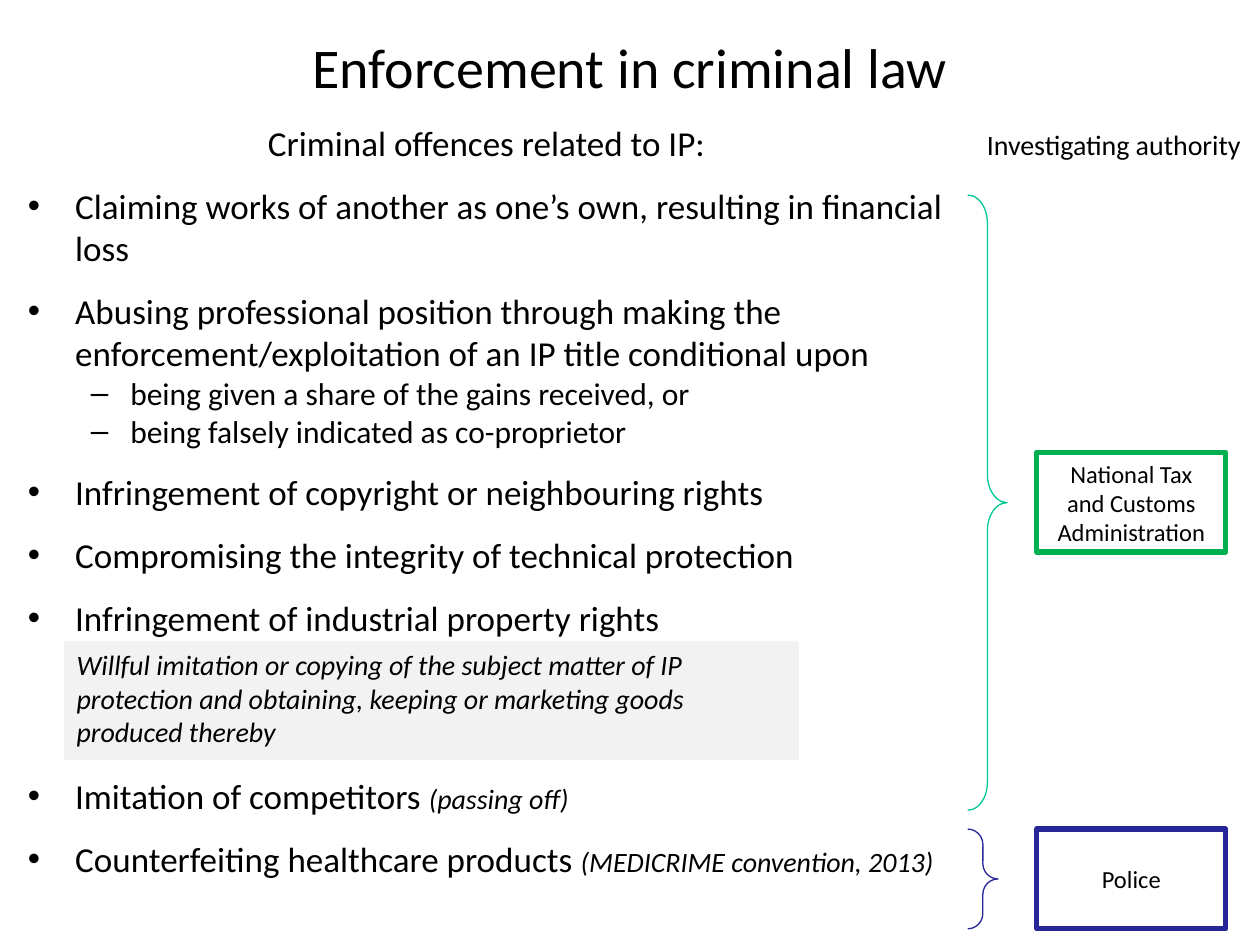
"""Build a slide on criminal offences related to IP and who investigates them."""
from dataclasses import dataclass

from lxml import etree
from pptx import Presentation
from pptx.dml.color import RGBColor
from pptx.enum import shapes, text
from pptx.oxml import ns
from pptx.util import Pt


@dataclass
class Theme:
    font: str = "Calibri"
    ink: str = "000000"
    panel: str = "F2F2F2"
    customs: str = "00B050"
    customs_brace: str = "00C896"
    police: str = "262699"
    title: int = 32
    item: int = 20
    subitem: int = 18
    remark: int = 16
    label: int = 14


theme = Theme()


def add_run(paragraph, wording, size, italic=False):
    run = paragraph.add_run()
    run.text = wording
    run.font.name = theme.font
    run.font.size = Pt(size)
    run.font.italic = italic
    run.font.color.rgb = RGBColor.from_string(theme.ink)


def add_outline(kind, place, line=None, width=0, fill=None):
    outline = slide.shapes.add_shape(kind, *map(Pt, place))
    outline.shadow.inherit = False
    if fill:
        outline.fill.solid()
        outline.fill.fore_color.rgb = RGBColor.from_string(fill)
    else:
        outline.fill.background()
    if line:
        outline.line.color.rgb = RGBColor.from_string(line)
        outline.line.width = Pt(width)
    else:
        outline.line.fill.background()
    return outline


prs = Presentation()
prs.slide_width, prs.slide_height = Pt(720), Pt(540)
slide = prs.slides.add_slide(prs.slide_layouts[1])

title = slide.shapes.title
title.left, title.top, title.width, title.height = map(Pt, (54, 15, 612, 45.5))
title.text_frame.vertical_anchor = text.MSO_ANCHOR.MIDDLE
heading = title.text_frame.paragraphs[0]
heading.alignment = text.PP_ALIGN.CENTER
add_run(heading, "Enforcement in criminal law", theme.title)

offences = slide.placeholders[1]
offences.left, offences.top, offences.width, offences.height = map(Pt, (8.75, 66, 538.5, 465))
offences.text_frame.auto_size = text.MSO_AUTO_SIZE.NONE
offence_list = [
    (0, 12, "Criminal offences related to IP:", ""),
    (0, 12, "Claiming works of another as one’s own, resulting in financial loss", ""),
    (0, 0, "Abusing professional position through making the "
           "enforcement/exploitation of an IP title conditional upon", ""),
    (1, 0, "being given a share of the gains received, or", ""),
    (1, 12, "being falsely indicated as co-proprietor", ""),
    (0, 12, "Infringement of copyright or neighbouring rights", ""),
    (0, 12, "Compromising the integrity of technical protection", ""),
    (0, 78, "Infringement of industrial property rights", ""),
    (0, 12, "Imitation of competitors ", "(passing off)"),
    (0, 12, "Counterfeiting healthcare products ", "(MEDICRIME convention, 2013)"),
]
for index, (level, gap, wording, remark) in enumerate(offence_list):
    frame = offences.text_frame
    offence = frame.add_paragraph() if index else frame.paragraphs[0]
    offence.level = level
    offence.space_before, offence.space_after = Pt(0), Pt(gap)
    add_run(offence, wording, theme.subitem if level else theme.item)
    if remark:
        add_run(offence, remark, theme.remark, italic=True)

lead = offences.text_frame.paragraphs[0]
lead.alignment = text.PP_ALIGN.CENTER
etree.SubElement(lead._p.get_or_add_pPr(), ns.qn("a:buNone"))

definition = add_outline(shapes.MSO_SHAPE.RECTANGLE, (36.75, 366.5, 419.75, 67.75), fill=theme.panel)
definition.text_frame.vertical_anchor = text.MSO_ANCHOR.TOP
definition.text_frame.paragraphs[0].alignment = text.PP_ALIGN.LEFT
add_run(definition.text_frame.paragraphs[0],
        "Willful imitation or copying of the subject matter of IP protection and "
        "obtaining, keeping or marketing goods produced thereby", theme.remark, italic=True)

authorities = [
    ("National Tax and Customs Administration", 258.5, theme.customs, text.MSO_ANCHOR.TOP),
    ("Police", 473.75, theme.police, text.MSO_ANCHOR.MIDDLE),
]
for name, top, color, anchor in authorities:
    authority = add_outline(shapes.MSO_SHAPE.RECTANGLE, (592.5, top, 108, 57), color, 3)
    authority.text_frame.vertical_anchor = anchor
    label = authority.text_frame.paragraphs[0]
    label.alignment = text.PP_ALIGN.CENTER
    label.space_after = Pt(12)
    add_run(label, name, theme.label)

braces = [
    ((553, 111.5, 22.5, 351.5), theme.customs_brace, (0.71, 0.5)),
    ((553, 473.75, 17.25, 57), theme.police, (0.51, 0.5)),
]
for place, color, curve in braces:
    brace = add_outline(shapes.MSO_SHAPE.RIGHT_BRACE, place, color, 0.75)
    brace.adjustments[0], brace.adjustments[1] = curve

column = slide.shapes.add_textbox(*map(Pt, (556, 69.25, 161, 26.75)))
column.text_frame.word_wrap = False
column.text_frame.auto_size = text.MSO_AUTO_SIZE.SHAPE_TO_FIT_TEXT
column_label = column.text_frame.paragraphs[0]
column_label.alignment = text.PP_ALIGN.CENTER
column_label.space_after = Pt(12)
add_run(column_label, "Investigating authority", theme.remark)

prs.save("out.pptx")
